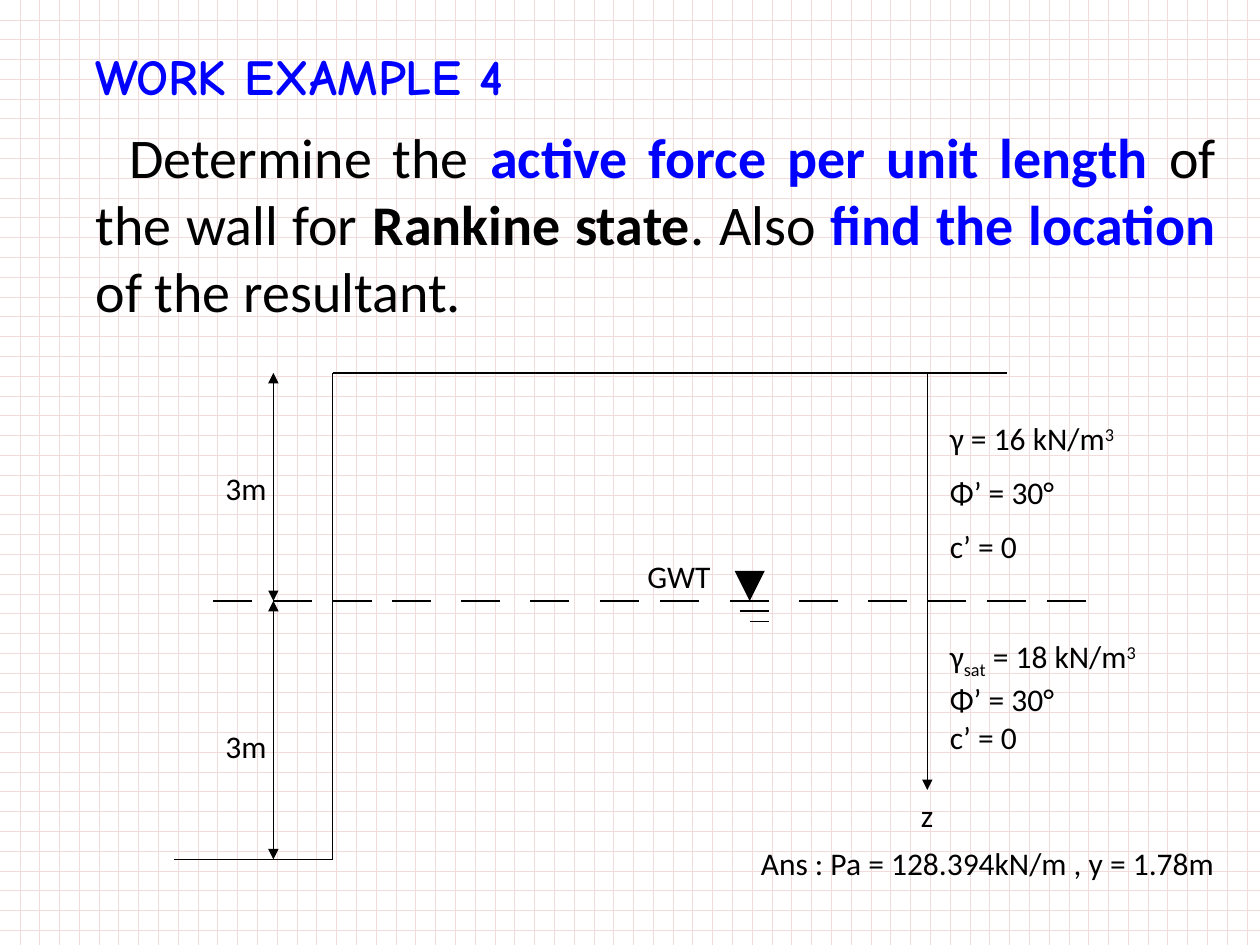
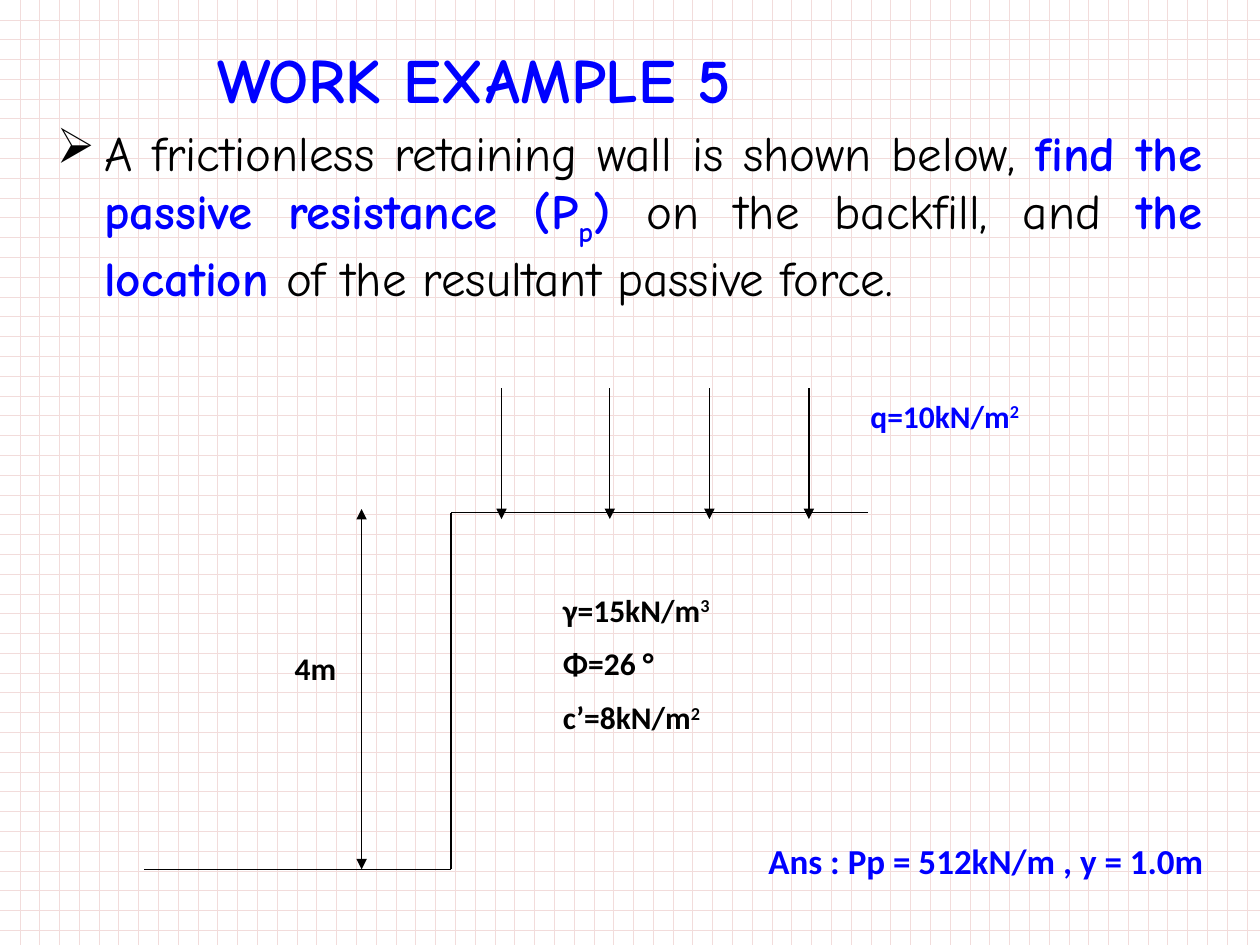
import pptx
import pptx.dml.color
import pptx.enum.dml
import pptx.enum.shapes
import pptx.enum.text
import pptx.oxml
import pptx.oxml.ns
import pptx.util

Inches = pptx.util.Inches
Pt = pptx.util.Pt

BLACK, BLUE, WHITE, PINK = "000000", "0000FF", "FFFFFF", "F2DCDB"
PLAIN_FONT, HAND_FONT = "Calibri", "Comic Neue"
BODY_INDENT = 0.38

# A span is a string, or a string with its own format.
STRONG = {"bold": True}
KEY = {"bold": True, "color": BLUE}
CUBED = ("3", {"baseline": 30})
SQUARED = ("2", {"baseline": 30})

ACTIVE_TASK = [[
    "Determine the ", ("active force per unit length ", KEY), "of the wall for ",
    ("Rankine state", STRONG), ". Also ", ("find the location ", KEY),
    "of the resultant.",
]]
PASSIVE_TASK = [[
    "A frictionless retaining wall is shown below, ",
    ("find the passive resistance (P", KEY), ("p", {**KEY, "baseline": -25}),
    (") ", KEY), "on the backfill, and ", ("the location ", KEY),
    "of the resultant passive force.",
]]
UPPER_SOIL = [["γ = 16 kN/m", CUBED], ["Φ’ = 30°"], ["c’ = 0"]]
LOWER_SOIL = [["γ", ("sat", {"baseline": -25}), " = 18 kN/m", CUBED],
              ["Φ’ = 30°"], ["c’ = 0"]]
BACKFILL = [["γ=15kN/m", CUBED], ["Φ=26 °"], ["c’=8kN/m", SQUARED]]

# Levels and positions of the drawings, in inches
GROUND, WATER, BASE = 2.96, 4.77, 6.82
WALL_X, DEPTH_X, HEIGHTS_X = 2.64, 7.36, 2.17
DASH_STARTS = [1.69, 2.17, 2.64, 3.11, 3.66, 4.21, 4.76,
               5.24, 5.79, 6.34, 6.89, 7.36, 7.83, 8.31]
DASH_LENGTH = 0.31
FILL_TOP, FILL_BASE, FILL_WALL_X = 4.07, 6.9, 3.58
SURCHARGE_XS = [3.98, 4.84, 5.63, 6.42]


def rgb(hex_color):
    return pptx.dml.color.RGBColor.from_string(hex_color)


def add_page(deck):
    """Add a blank page with the pink grid behind it."""
    page = deck.slides.add_slide(deck.slide_layouts[6])
    fill = page.background.fill
    fill.patterned()
    fill.pattern = pptx.enum.dml.MSO_PATTERN.DOTTED_GRID
    fill.fore_color.rgb = rgb(PINK)
    fill.back_color.rgb = rgb(WHITE)
    return page


def add_text(page, paragraphs, left, top, width, height=0.4, size=18,
             font=PLAIN_FONT, color=BLACK, bold=False, gap=0, middle=False):
    """Add a text box; gap is the space in points between paragraphs."""
    box = page.shapes.add_textbox(Inches(left), Inches(top),
                                  Inches(width), Inches(height))
    frame = box.text_frame
    frame.word_wrap = True
    if middle:
        frame.vertical_anchor = pptx.enum.text.MSO_ANCHOR.MIDDLE
    if isinstance(paragraphs, str):
        paragraphs = [[paragraphs]]
    for index, spans in enumerate(paragraphs):
        para = frame.add_paragraph() if index else frame.paragraphs[0]
        para.space_before = Pt(gap if index else 0)
        for item in spans:
            text, style = (item, {}) if isinstance(item, str) else item
            span = para.add_run()
            span.text = text
            span.font.name = font
            span.font.size = Pt(size)
            span.font.bold = style.get("bold", bold)
            span.font.color.rgb = rgb(style.get("color", color))
            if "baseline" in style:
                span._r.get_or_add_rPr().set("baseline", str(style["baseline"] * 1000))
    return box


def add_title(page, text, left, top, size):
    add_text(page, text, left, top, 8.5, 0.75, size=size, font=HAND_FONT,
             color=BLUE, bold=True, middle=True)


def add_task(page, paragraphs, left, width, height, first_indent, bullet=None, **style):
    """Add the justified question under the title."""
    box = add_text(page, paragraphs, left, 0.92, width, height, **style)
    para = box.text_frame.paragraphs[0]
    para.alignment = pptx.enum.text.PP_ALIGN.JUSTIFY
    properties = para._p.get_or_add_pPr()
    properties.set("marL", str(Inches(BODY_INDENT)))
    properties.set("indent", str(Inches(first_indent)))
    if bullet:
        mark = pptx.oxml.ns.qn("a:buChar")
        properties.append(properties.makeelement(mark, {"char": bullet}))


def add_line(page, x1, y1, x2, y2, weight=0.75, head=False, tail=False):
    """Add a black line; head and tail put arrowheads at its start and end."""
    line = page.shapes.add_connector(pptx.enum.shapes.MSO_CONNECTOR.STRAIGHT,
                                     Inches(x1), Inches(y1), Inches(x2), Inches(y2))
    line.line.color.rgb = rgb(BLACK)
    line.line.width = Pt(weight)
    qn = pptx.oxml.ns.qn
    outline = line.line._get_or_add_ln()
    for tag, wanted in (("a:headEnd", head), ("a:tailEnd", tail)):
        if wanted:
            outline.append(outline.makeelement(qn(tag), {"type": "triangle"}))
    shape_properties = line._element.spPr
    shape_properties.append(shape_properties.makeelement(qn("a:effectLst"), {}))


def add_lines(page, points):
    """Join the points with straight lines."""
    for start, end in zip(points, points[1:]):
        add_line(page, *start, *end)


def build_active_force(deck):
    page = add_page(deck)
    add_title(page, "WORK EXAMPLE 4", 0.66, 0.22, 28.8)
    add_task(page, ACTIVE_TASK, 0.28, 9.47, 1.92, first_indent=0.27, size=32)

    add_lines(page, [(1.38, BASE), (WALL_X, BASE), (WALL_X, GROUND), (7.99, GROUND)])
    for start in DASH_STARTS:
        add_line(page, start, WATER, start + DASH_LENGTH, WATER)
    add_line(page, DEPTH_X, GROUND, DEPTH_X, 6.27, tail=True)
    add_text(page, "z", 7.21, 6.27, 0.71)

    add_line(page, 5.95, 4.54, 5.95, WATER, weight=5.75, tail=True)
    for left, y in ((5.87, 4.85), (5.95, 4.93)):
        add_line(page, left, y, 6.1, y)
    add_text(page, "GWT", 5.04, 4.37, 0.9)

    add_text(page, UPPER_SOIL, 7.44, 3.28, 1.65, 1.31, gap=9)
    add_text(page, LOWER_SOIL, 7.44, 5.01, 2.13, 1.46)
    for top, bottom, label_top in ((GROUND, WATER, 3.67), (WATER, BASE, 5.72)):
        add_line(page, HEIGHTS_X, top, HEIGHTS_X, bottom, head=True, tail=True)
        add_text(page, "3m", 1.69, label_top, 0.79)
    add_text(page, "Ans : Pa = 128.394kN/m , y = 1.78m", 5.94, 6.65, 4)


def build_passive_resistance(deck):
    page = add_page(deck)
    add_title(page, "WORK EXAMPLE 5", 1.63, 0.25, 36)
    add_task(page, PASSIVE_TASK, 0.35, 9.29, 5.56, first_indent=-BODY_INDENT,
             bullet="➢", size=28, font=HAND_FONT)

    add_lines(page, [(6.89, FILL_TOP), (FILL_WALL_X, FILL_TOP),
                     (FILL_WALL_X, FILL_BASE), (1.14, FILL_BASE)])
    for x in SURCHARGE_XS:
        add_line(page, x, 3.08, x, 4.12, tail=True)
    add_text(page, [["q=10kN/m", SQUARED]], 6.81, 3.1, 1.89, color=BLUE, bold=True)
    add_line(page, 2.87, 4.04, 2.87, FILL_BASE, head=True, tail=True)
    add_text(page, "4m", 2.24, 5.1, 1.1, bold=True)
    add_text(page, BACKFILL, 4.37, 4.64, 1.97, 1.31, bold=True, gap=9)
    add_text(page, "Ans : Pp = 512kN/m , y = 1.0m", 6, 6.61, 4, 0.44,
             size=20, color=BLUE, bold=True)


def main():
    deck = pptx.Presentation()
    deck.slide_width, deck.slide_height = Inches(10), Inches(7.5)
    build_active_force(deck)
    build_passive_resistance(deck)
    deck.save("out.pptx")


if __name__ == "__main__":
    main()
